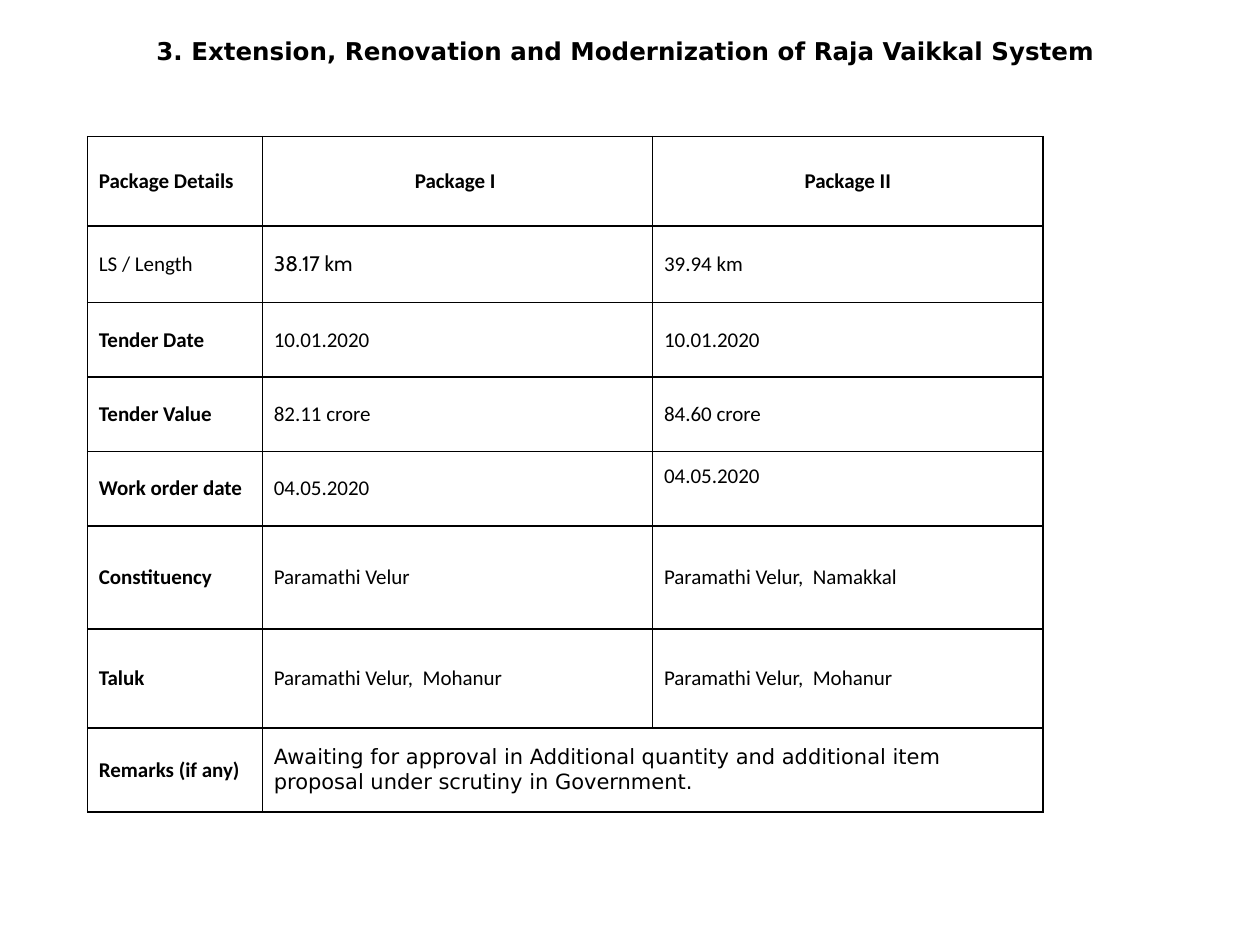
import pptx
import pptx.dml.color
import pptx.enum.text
import pptx.oxml
import pptx.oxml.ns
import pptx.util

Pt = pptx.util.Pt
ALIGN = pptx.enum.text.PP_ALIGN
MIDDLE = pptx.enum.text.MSO_ANCHOR.MIDDLE
COLOURS = {"text": "000000", "border": "000000"}
TITLE = "3. Extension, Renovation and Modernization of Raja Vaikkal System "
TITLE_ONLY = 5

COLUMN_WIDTHS = [100, 223, 223]
ROWS = [  # height, then the cell texts
    (51, ["Package Details", "Package I ", "Package II"]),
    (44, ["LS / Length", "38.17 km", "39.94 km"]),
    (42.5, ["Tender Date", "10.01.2020", "10.01.2020"]),
    (42.5, ["Tender Value", "82.11 crore", "84.60 crore"]),
    (42.5, ["Work order date", "04.05.2020", "04.05.2020"]),
    (59, ["Constituency", "Paramathi Velur", "Paramathi Velur,  Namakkal"]),
    (56.5, ["Taluk", "Paramathi Velur,  Mohanur", "Paramathi Velur,  Mohanur"]),
    (48, ["Remarks (if any)",
          "Awaiting for approval in Additional quantity and additional item "
          "proposal under scrutiny in Government."]),
]
LENGTH_ROW, WORK_ORDER_ROW, REMARKS_ROW = 1, 4, 7
CELL_FONTS = {(LENGTH_ROW, 1): "Cabin", (REMARKS_ROW, 1): "DejaVu Sans"}


class SlideBuilder:
    """Holds the style and the current slide."""

    title_font, title_size = "DejaVu Sans", 14
    cell_font, cell_size = "Calibri", 12

    def __init__(self, slide):
        self.slide = slide

    def add_run(self, paragraph, text, font, size, bold):
        run = paragraph.add_run()
        run.text = text
        run.font.name = font
        run.font.size = Pt(size)
        run.font.bold = bold
        run.font.color.rgb = pptx.dml.color.RGBColor.from_string(COLOURS["text"])

    def title(self, text, left, top, width, height):
        shape = self.slide.shapes.title
        shape.left, shape.top = Pt(left), Pt(top)
        shape.width, shape.height = Pt(width), Pt(height)
        frame = shape.text_frame
        frame.word_wrap = True
        frame.auto_size = pptx.enum.text.MSO_AUTO_SIZE.NONE
        frame.vertical_anchor = MIDDLE
        paragraph = frame.paragraphs[0]
        paragraph.alignment = ALIGN.CENTER
        self.add_run(paragraph, text, self.title_font, self.title_size, True)

    def table(self, left, top, widths, rows):
        heights = [height for height, _ in rows]
        table = self.slide.shapes.add_table(
            len(rows), len(widths), Pt(left), Pt(top),
            Pt(sum(widths)), Pt(sum(heights))).table
        table.first_row = table.horz_banding = False
        for column, width in zip(table.columns, widths):
            column.width = Pt(width)
        for row, height in zip(table.rows, heights):
            row.height = Pt(height)
        for cell in table.iter_cells():
            self.frame_cell(cell)
        for row_index, (_, texts) in enumerate(rows):
            for column_index, text in enumerate(texts):
                self.fill_cell(table, row_index, column_index, text)
        return table

    def frame_cell(self, cell):
        properties = cell._tc.get_or_add_tcPr()
        for side in "LRTB":
            properties.append(pptx.oxml.parse_xml(
                f'<a:ln{side} {pptx.oxml.ns.nsdecls("a")} w="{Pt(1)}"><a:solidFill>'
                f'<a:srgbClr val="{COLOURS["border"]}"/></a:solidFill></a:ln{side}>'))
        cell.fill.background()
        cell.vertical_anchor = MIDDLE
        cell.margin_left = cell.margin_right = Pt(6.5)
        cell.margin_top = cell.margin_bottom = Pt(3.6)

    def fill_cell(self, table, row_index, column_index, text):
        header = row_index == 0
        label = column_index == 0 and row_index != LENGTH_ROW
        paragraph = table.cell(row_index, column_index).text_frame.paragraphs[0]
        if header and column_index > 0:
            paragraph.alignment = ALIGN.CENTER
        font = CELL_FONTS.get((row_index, column_index), self.cell_font)
        self.add_run(paragraph, text, font, self.cell_size, header or label)


def main():
    presentation = pptx.Presentation()
    presentation.slide_width, presentation.slide_height = Pt(720), Pt(540)
    slide = presentation.slides.add_slide(presentation.slide_layouts[TITLE_ONLY])
    builder = SlideBuilder(slide)

    # Heading
    builder.title(TITLE, 0, 16.5, 720, 24.5)

    # Package table, with the remark across both packages
    table = builder.table(50, 78, COLUMN_WIDTHS, ROWS)
    table.cell(REMARKS_ROW, 1).merge(table.cell(REMARKS_ROW, 2))

    # The second work order date sits half a line above the middle
    table.cell(WORK_ORDER_ROW, 2).margin_bottom = Pt(18)

    presentation.save("out.pptx")


if __name__ == "__main__":
    main()
